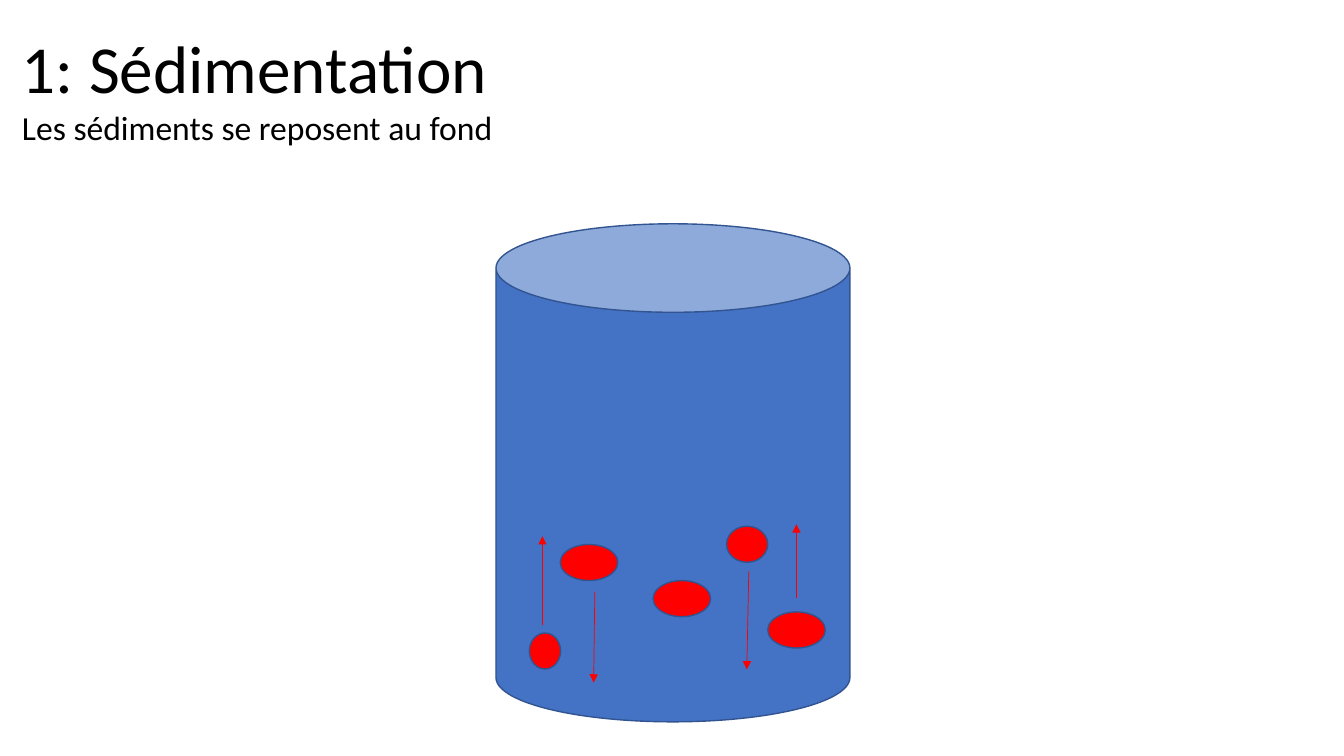
"""Build a slide that shows sediment settling in a water tank."""
from lxml import etree
from pptx import Presentation
from pptx.dml.color import RGBColor
from pptx.enum.shapes import MSO_CONNECTOR, MSO_SHAPE
from pptx.enum.text import MSO_ANCHOR, MSO_AUTO_SIZE, PP_ALIGN
from pptx.oxml.ns import qn
from pptx.util import Cm, Pt

CAN, OVAL = MSO_SHAPE.CAN, MSO_SHAPE.OVAL
STRAIGHT = MSO_CONNECTOR.STRAIGHT
TOP, LEFT = MSO_ANCHOR.TOP, PP_ALIGN.LEFT
FIT_SHAPE = MSO_AUTO_SIZE.SHAPE_TO_FIT_TEXT

WATER, OUTLINE, RED, BLACK = "4472C4", "325491", "FF0000", "000000"
GRAIN_HEIGHT = 0.91
HEADING = [("1: Sédimentation", 48), ("Les sédiments se reposent au fond", 24)]
GRAINS = [
    (19.35, 15.42, 1.45),
    (16.46, 14.63, 1.45),
    (13.34, 15.95, 0.79),
    (18.31, 13.26, 1.04),
    (14.12, 13.72, 1.45),
]
ARROWS = [
    (13.67, 15.75, 13.67, 13.51),
    (14.99, 14.91, 14.96, 17.2),
    (18.87, 14.4, 18.82, 16.87),
    (20.07, 15.06, 20.07, 13.21),
]


def colour(value):
    """Turn a hex string into a colour."""
    return RGBColor.from_string(value)


def apply_format(target, values):
    """Set each attribute named in a dict."""
    for name, value in values.items():
        setattr(target, name, value)


def draw_line(line, value, width):
    """Set the colour and the width in points of a line."""
    line.color.rgb = colour(value)
    line.width = Pt(width)


def add_solid(page, kind, bounds, fill):
    """Add an outlined shape with a plain fill."""
    shape = page.shapes.add_shape(kind, *map(Cm, bounds))
    shape.shadow.inherit = False
    shape.fill.solid()
    shape.fill.fore_color.rgb = colour(fill)
    draw_line(shape.line, OUTLINE, 1)


def add_arrow(page, ends):
    """Add a thin red arrow between two points."""
    arrow = page.shapes.add_connector(STRAIGHT, *map(Cm, ends))
    draw_line(arrow.line, RED, 0.5)
    outline = arrow.line._get_or_add_ln()
    etree.SubElement(outline, qn("a:tailEnd"), type="triangle")
    etree.SubElement(outline.getparent(), qn("a:effectLst"))


def fill_title(box, bounds, lines):
    """Place the title and write its lines of text."""
    sides = ("left", "top", "width", "height")
    apply_format(box, dict(zip(sides, map(Cm, bounds))))
    frame = box.text_frame
    frame.text = "\n".join(text for text, size in lines)
    apply_format(frame, {"word_wrap": True, "vertical_anchor": TOP, "auto_size": FIT_SHAPE})
    for para, (text, size) in zip(frame.paragraphs, lines):
        para.alignment = LEFT
        span = para.runs[0]
        apply_format(span.font, {"name": "Calibri", "size": Pt(size)})
        span.font.color.rgb = colour(BLACK)


def main():
    """Build the deck and save it."""
    deck = Presentation()
    apply_format(deck, {"slide_width": Cm(33.87), "slide_height": Cm(19.05)})
    page = deck.slides.add_slide(deck.slide_layouts[5])
    fill_title(page.shapes.title, (0.3, 0.53, 13.59, 3.33), HEADING)
    add_solid(page, CAN, (12.5, 5.64, 8.92, 12.55), WATER)
    for left, top, width in GRAINS:
        add_solid(page, OVAL, (left, top, width, GRAIN_HEIGHT), RED)
    for ends in ARROWS:
        add_arrow(page, ends)
    deck.save("out.pptx")


if __name__ == "__main__":
    main()
